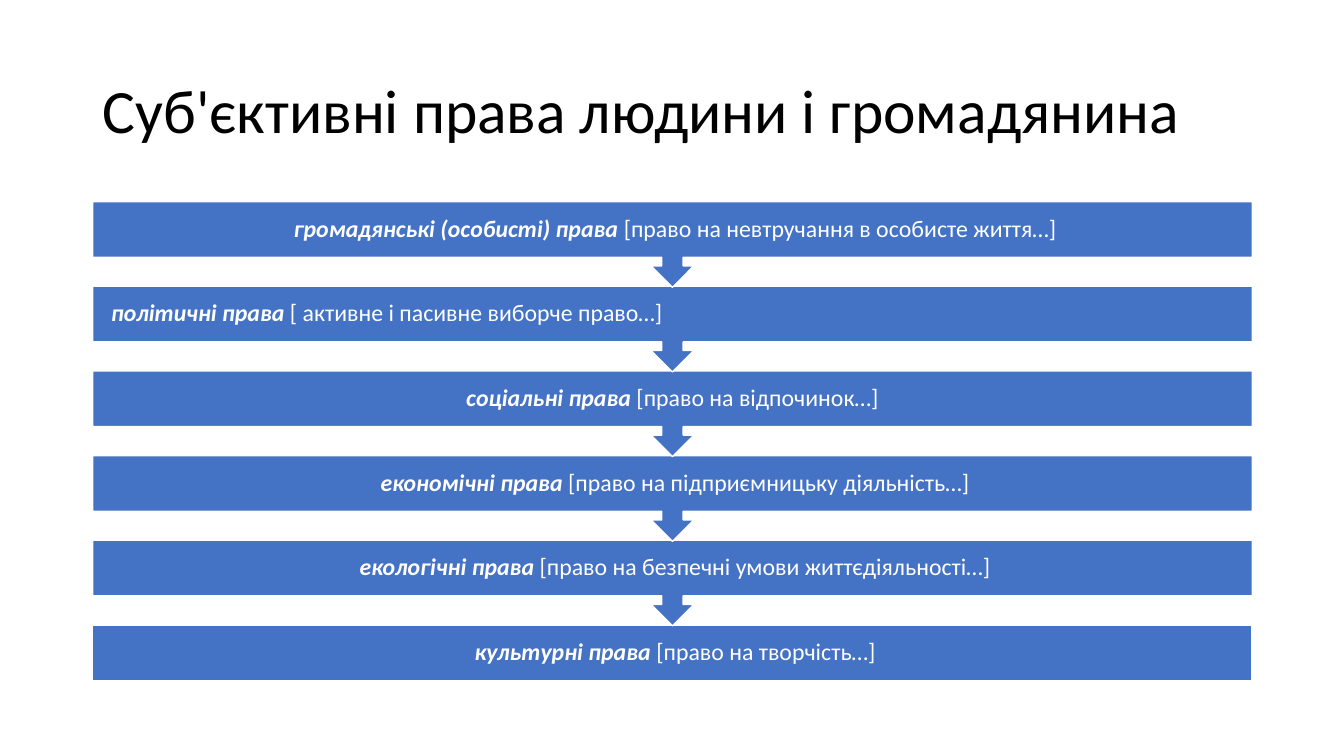
"""Build a slide listing the subjective rights of a person and citizen."""
from dataclasses import dataclass

from pptx import Presentation
from pptx.dml.color import RGBColor
from pptx.enum.shapes import MSO_SHAPE as Shape
from pptx.enum.text import MSO_ANCHOR as Anchor, PP_ALIGN as Align
from pptx.slide import Slide
from pptx.text.text import TextFrame, _Paragraph as Paragraph
from pptx.util import Inches, Pt

BLACK = RGBColor(0x00, 0x00, 0x00)
WHITE = RGBColor(0xFF, 0xFF, 0xFF)
BLUE = RGBColor(0x44, 0x72, 0xC4)

LEFT, WIDTH = 0.92, 11.5
TOP, PITCH = 2.0, 0.84
BAR_H, CALLOUT_H = 0.55, 0.85
INSET = 0.13


@dataclass(frozen=True)
class Right:
    name: str
    example: str
    align: Align = Align.CENTER


RIGHTS = [
    Right(" громадянські (особисті) права", " [право на невтручання в особисте життя…]"),
    Right(" політичні права", " [ активне і пасивне виборче право…]", Align.LEFT),
    Right("соціальні права", " [право на відпочинок…]"),
    Right(" економічні права", " [право на підприємницьку діяльність…]"),
    Right(" екологічні права", " [право на безпечні умови життєдіяльності…]"),
    Right(" культурні права", " [право на творчість…]"),
]


def start_text(tf: TextFrame, align: Align) -> Paragraph:
    tf.word_wrap = True
    tf.vertical_anchor = Anchor.MIDDLE
    p = tf.paragraphs[0]
    p.alignment = align
    p.line_spacing = 0.9
    return p


def add_run(p: Paragraph, text: str, size: float, color: RGBColor, strong: bool = False) -> None:
    r = p.add_run()
    r.text = text
    r.font.name = "Calibri"
    r.font.size = Pt(size)
    r.font.color.rgb = color
    r.font.bold = r.font.italic = strong


def add_title(s: Slide, text: str) -> None:
    sp = s.shapes.add_textbox(Inches(LEFT), Inches(0.4), Inches(WIDTH), Inches(1.45))
    add_run(start_text(sp.text_frame, Align.LEFT), text, 44, BLACK)


def add_right(s: Slide, right: Right, row: int, is_last: bool) -> None:
    kind, height = (Shape.RECTANGLE, BAR_H) if is_last else (Shape.DOWN_ARROW_CALLOUT, CALLOUT_H)
    sp = s.shapes.add_shape(
        kind, Inches(LEFT), Inches(TOP + row * PITCH), Inches(WIDTH), Inches(height))
    sp.shadow.inherit = False
    sp.fill.solid()
    sp.fill.fore_color.rgb = BLUE
    sp.line.color.rgb = WHITE
    sp.line.width = Pt(1)
    tf = sp.text_frame
    tf.margin_left = tf.margin_right = tf.margin_top = tf.margin_bottom = Inches(INSET)
    p = start_text(tf, right.align)
    add_run(p, right.name, 17, WHITE, strong=True)
    add_run(p, right.example, 17, WHITE)


def main() -> None:
    prs = Presentation()
    prs.slide_width, prs.slide_height = Inches(13.33), Inches(7.5)
    s = prs.slides.add_slide(prs.slide_layouts[6])
    add_title(s, "Суб'єктивні права людини і громадянина")
    last = len(RIGHTS) - 1
    for row, right in reversed(list(enumerate(RIGHTS))):
        add_right(s, right, row, row == last)
    prs.save("out.pptx")


if __name__ == "__main__":
    main()
